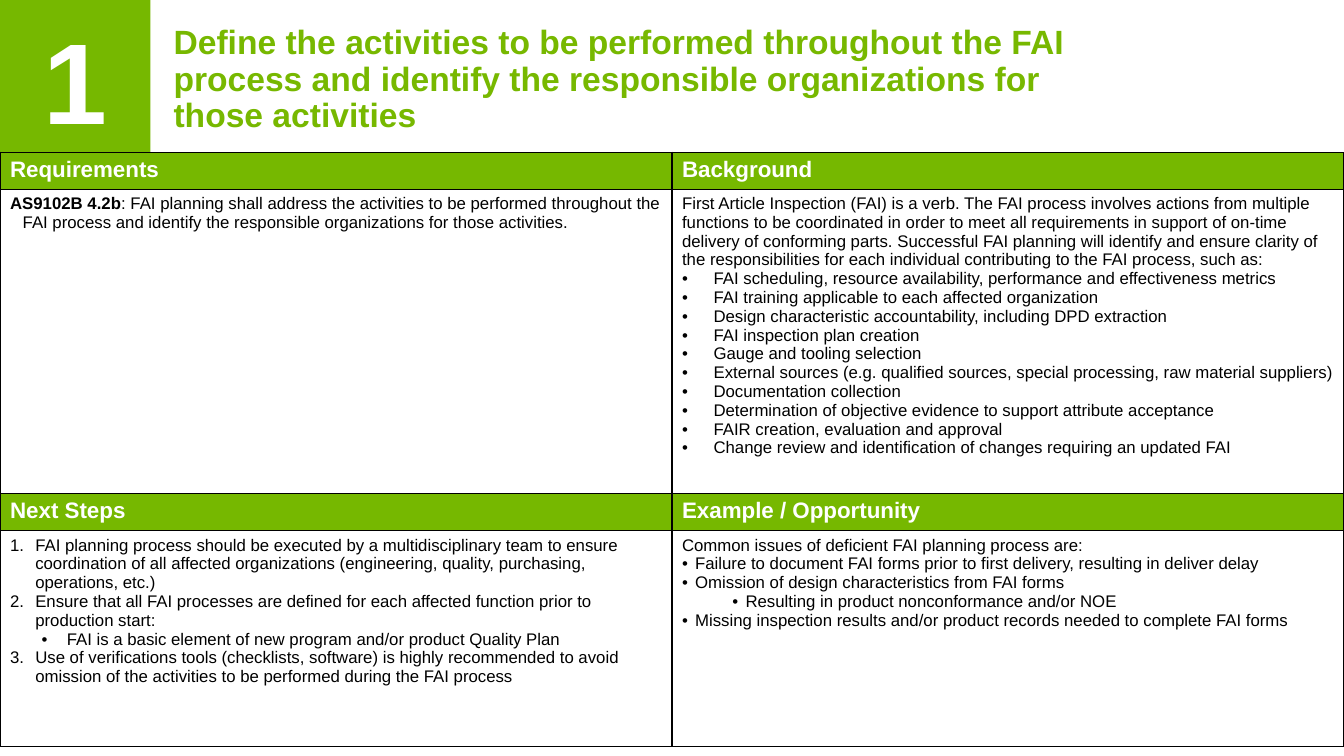
from lxml.etree import SubElement
from pptx import Presentation
from pptx.dml.color import RGBColor
from pptx.enum.shapes import MSO_SHAPE
from pptx.enum.text import MSO_ANCHOR, PP_ALIGN
from pptx.oxml.ns import qn
from pptx.util import Pt

GREEN, WHITE, BLACK = "76B800", "FFFFFF", "000000"
WIDTH, HEIGHT, HEAD = 960, 540, 108.7

BADGE = {"size": Pt(82), "bold": True, "name": "Arial"}
TITLE = {"size": Pt(24), "bold": True, "name": "Arial"}
LABEL = {"size": Pt(16), "bold": True, "name": "Arial"}
BODY = {"size": Pt(12), "bold": False, "name": "Arial"}

# Paragraph kinds: level, left margin, hanging indent, bullet
KINDS = {
    "plain": (0, 0, 0, None),
    "hang": (0, 9, 9, None),
    "wide": (0, 22.5, 22.5, "•"),
    "step": (0, 18, 18, "1."),
    "substep": (1, 40.5, 18, "•"),
    "issue": (0, 9.36, 9.36, "•"),
    "result": (1, 45.36, 9.36, "•"),
}

REQUIRE = [
    ("hang", "AS9102B 4.2b", ": FAI planning shall address the activities to be performed "
     "throughout the FAI process and identify the responsible organizations for those activities."),
]
BACK = [
    ("plain", "", "First Article Inspection (FAI) is a verb. The FAI process involves actions from "
     "multiple functions to be coordinated in order to meet all requirements in support of on-time "
     "delivery of conforming parts. Successful FAI planning will identify and ensure clarity of the "
     "responsibilities for each individual contributing to the FAI process, such as:"),
] + [("wide", "", text) for text in (
    "FAI scheduling, resource availability, performance and effectiveness metrics",
    "FAI training applicable to each affected organization",
    "Design characteristic accountability, including DPD extraction",
    "FAI inspection plan creation",
    "Gauge and tooling selection",
    "External sources (e.g. qualified sources, special processing, raw material suppliers)",
    "Documentation collection",
    "Determination of objective evidence to support attribute acceptance",
    "FAIR creation, evaluation and approval",
    "Change review and identification of changes requiring an updated FAI",
)]
STEPS = [
    ("step", "", "FAI planning process should be executed by a multidisciplinary team to ensure "
     "coordination of all affected organizations (engineering, quality, purchasing, operations, etc.)"),
    ("step", "", "Ensure that all FAI processes are defined for each affected function prior to "
     "production start:"),
    ("substep", "", "FAI is a basic element of new program and/or product Quality Plan"),
    ("step", "", "Use of verifications tools (checklists, software) is highly recommended to avoid "
     "omission of the activities to be performed during the FAI process"),
]
ISSUES = [
    ("plain", "", "Common issues of deficient FAI planning process are:"),
    ("issue", "", "Failure to document FAI forms prior to first delivery, resulting in deliver delay"),
    ("issue", "", "Omission of design characteristics from FAI forms"),
    ("result", "", "Resulting in product nonconformance and/or NOE"),
    ("issue", "", "Missing inspection results and/or product records needed to complete FAI forms"),
]
PANELS = [
    [("Requirements", REQUIRE), ("Background", BACK)],
    [("Next Steps", STEPS), ("Example / Opportunity", ISSUES)],
]


def paint(target, color):
    """Give a fill a solid colour."""
    target.solid()
    target.fore_color.rgb = RGBColor.from_string(color)


def style(font, values, color):
    for name, value in values.items():
        setattr(font, name, value)
    font.color.rgb = RGBColor.from_string(color)


def write(para, text, values, color):
    run = para.add_run()
    run.text = text
    style(run.font, values, color)


def indent(para, kind):
    level, left, hang, mark = KINDS[kind]
    para.level = level
    props = para._p.get_or_add_pPr()
    props.set("marL", str(Pt(left)))
    props.set("indent", str(-Pt(hang)))
    if mark == "1.":
        SubElement(props, qn("a:buFont"), typeface="Arial")
        SubElement(props, qn("a:buAutoNum"), type="arabicPeriod")
    elif mark:
        SubElement(props, qn("a:buFont"), typeface="Arial")
        SubElement(props, qn("a:buChar"), char=mark)
    else:
        SubElement(props, qn("a:buNone"))


def border(cell):
    props = cell._tc.get_or_add_tcPr()
    for side in ("a:lnL", "a:lnR", "a:lnT", "a:lnB"):
        line = SubElement(props, qn(side), w=str(Pt(1)))
        fill = SubElement(line, qn("a:solidFill"))
        SubElement(fill, qn("a:srgbClr"), val=BLACK)


def label(cell, text):
    border(cell)
    paint(cell.fill, GREEN)
    write(cell.text_frame.paragraphs[0], text, LABEL, WHITE)


def detail(cell, items):
    border(cell)
    cell.fill.background()
    frame = cell.text_frame
    for i, (kind, lead, text) in enumerate(items):
        para = frame.add_paragraph() if i else frame.paragraphs[0]
        indent(para, kind)
        if lead:
            write(para, lead, {**BODY, "bold": True}, BLACK)
        write(para, text, BODY, BLACK)


def header(slide, x, y, width, height, number, text):
    """Number badge with the slide title to its right."""
    badge = slide.shapes.add_shape(MSO_SHAPE.RECTANGLE, Pt(x), Pt(y), Pt(107.5), Pt(height))
    badge.shadow.inherit = False
    paint(badge.fill, GREEN)
    badge.line.fill.background()
    frame = badge.text_frame
    frame.vertical_anchor = MSO_ANCHOR.BOTTOM
    frame.paragraphs[0].alignment = PP_ALIGN.CENTER
    write(frame.paragraphs[0], number, BADGE, WHITE)

    title = slide.shapes.title
    title.left, title.top = Pt(x + 116.8), Pt(y + 13.5)
    title.width, title.height = Pt(width - 294.8), Pt(height - 21)
    frame = title.text_frame
    frame.word_wrap = True
    frame.vertical_anchor = MSO_ANCHOR.MIDDLE
    para = frame.paragraphs[0]
    para.alignment = PP_ALIGN.LEFT
    para.line_spacing = 0.9
    write(para, text, TITLE, "77B800")


def matrix(slide, x, y, width, height):
    """Two rows of panels, each a green label above its details."""
    frame = slide.shapes.add_table(4, 2, Pt(x), Pt(y), Pt(width), Pt(height))
    table = frame.table
    table.first_row = table.horz_banding = False
    bar, upper = 26.4, 217.6
    for row, size in zip(table.rows, (bar, upper, bar, height - 2 * bar - upper)):
        row.height = Pt(size)
    for col in table.columns:
        col.width = Pt(width / 2)
    for r, panels in enumerate(PANELS):
        for c, (name, items) in enumerate(panels):
            label(table.cell(2 * r, c), name)
            detail(table.cell(2 * r + 1, c), items)


def main():
    deck = Presentation()
    deck.slide_width, deck.slide_height = Pt(WIDTH), Pt(HEIGHT)
    slide = deck.slides.add_slide(deck.slide_layouts[5])
    header(slide, 0, 0, WIDTH, HEAD, "1",
           "Define the activities to be performed throughout the FAI process and identify "
           "the responsible organizations for those activities")
    matrix(slide, 0, HEAD, WIDTH, 424.5)
    deck.save("out.pptx")


if __name__ == "__main__":
    main()
